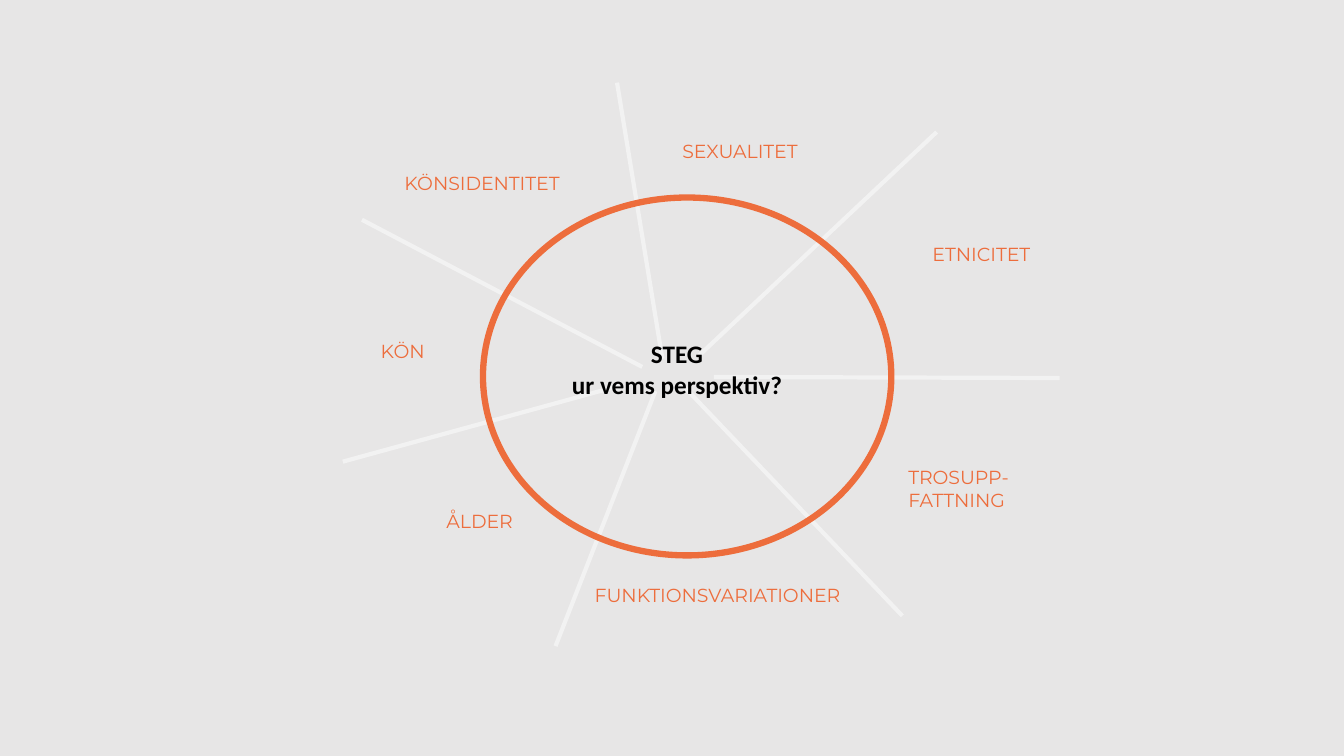
from lxml import etree
from pptx import Presentation
from pptx.dml.color import RGBColor
from pptx.enum.shapes import MSO_CONNECTOR, MSO_SHAPE
from pptx.enum.text import MSO_ANCHOR, MSO_AUTO_SIZE, PP_ALIGN
from pptx.oxml.ns import qn
from pptx.util import Inches, Pt

LEFT, MID, RIGHT = PP_ALIGN.LEFT, PP_ALIGN.CENTER, PP_ALIGN.RIGHT

# Content
CORE = ["STEG", "ur vems perspektiv?"]
LABELS = [  # text, left, top, width, height, alignment
    ("KÖN", 2.99, 3.32, 1.32, 0.56, RIGHT),
    ("ÅLDER", 4.33, 5.01, 1.59, 0.33, LEFT),
    ("FUNKTIONSVARIATIONER", 5.8, 5.74, 2.9, 0.33, LEFT),
    ("ETNICITET", 9.15, 2.36, 1.59, 0.33, LEFT),
    ("SEXUALITET", 6.67, 1.34, 1.59, 0.33, LEFT),
    ("KÖNSIDENTITET", 3.71, 1.65, 1.94, 0.33, RIGHT),
    ("TROSUPP-FATTNING", 8.91, 4.57, 1.59, 0.56, LEFT),
]
SPOKES = [  # outer x, y, inner x, y
    (5.51, 6.41, 6.5, 3.88),
    (10.51, 3.75, 7.08, 3.74),
    (6.12, 0.82, 6.57, 3.56),
    (3.4, 4.58, 6.17, 3.82),
    (3.59, 2.18, 6.37, 3.64),
    (9.29, 1.31, 6.93, 3.53),
    (8.95, 6.11, 6.75, 3.8),
]
RING = (4.79, 1.96, 4.05, 3.55)
CORE_BOX = (5.18, 3.31, 2.78, 0.71)


class Theme:
    back = RGBColor.from_string("E7E6E6")
    spoke = RGBColor.from_string("F2F2F2")
    accent = RGBColor.from_string("ED6D3C")
    ink = RGBColor.from_string("000000")
    label_font, core_font = "Montserrat", "Calibri"
    label_size, core_size = Pt(13.5), Pt(18)
    spoke_width, ring_width = Pt(3), Pt(4.5)


def write(shape, lines, font, size, color, align=LEFT, bold=False, inset=0.1):
    frame = shape.text_frame
    frame.word_wrap = True
    frame.auto_size = MSO_AUTO_SIZE.NONE
    frame.vertical_anchor = MSO_ANCHOR.TOP
    frame.margin_left, frame.margin_right = Inches(inset), Inches(0.1)
    frame.margin_top = frame.margin_bottom = Inches(0.05)
    for i, line in enumerate(lines):
        para = frame.paragraphs[0] if i == 0 else frame.add_paragraph()
        para.alignment = align
        run = para.add_run()
        run.text = line
        run.font.name, run.font.size = font, size
        run.font.bold, run.font.color.rgb = bold, color


def add_spoke(shapes, ends):
    spoke = shapes.add_connector(MSO_CONNECTOR.STRAIGHT, *map(Inches, ends))
    spoke.line.color.rgb = Theme.spoke
    spoke.line.width = Theme.spoke_width
    etree.SubElement(spoke._element.spPr, qn("a:effectLst"))


def main():
    deck = Presentation()
    deck.slide_width, deck.slide_height = Inches(13.33), Inches(7.5)
    slide = deck.slides.add_slide(deck.slide_layouts[5])
    slide.background.fill.solid()
    slide.background.fill.fore_color.rgb = Theme.back

    # Wheel: spokes, labels and ring
    wheel = slide.shapes.add_group_shape().shapes
    for ends in SPOKES:
        add_spoke(wheel, ends)
    for text, *box, align in LABELS:
        write(wheel.add_textbox(*map(Inches, box)), [text], Theme.label_font,
              Theme.label_size, Theme.accent, align=align)
    ring = wheel.add_shape(MSO_SHAPE.OVAL, *map(Inches, RING))
    ring.shadow.inherit = False
    ring.fill.background()
    ring.line.color.rgb = Theme.accent
    ring.line.width = Theme.ring_width

    # Title at the hub, in front of the wheel
    title = slide.shapes.title
    title.left, title.top, title.width, title.height = map(Inches, CORE_BOX)
    write(title, CORE, Theme.core_font, Theme.core_size, Theme.ink,
          align=MID, bold=True, inset=0.39)
    slide.shapes.element.append(title.element)

    deck.save("out.pptx")


if __name__ == "__main__":
    main()
